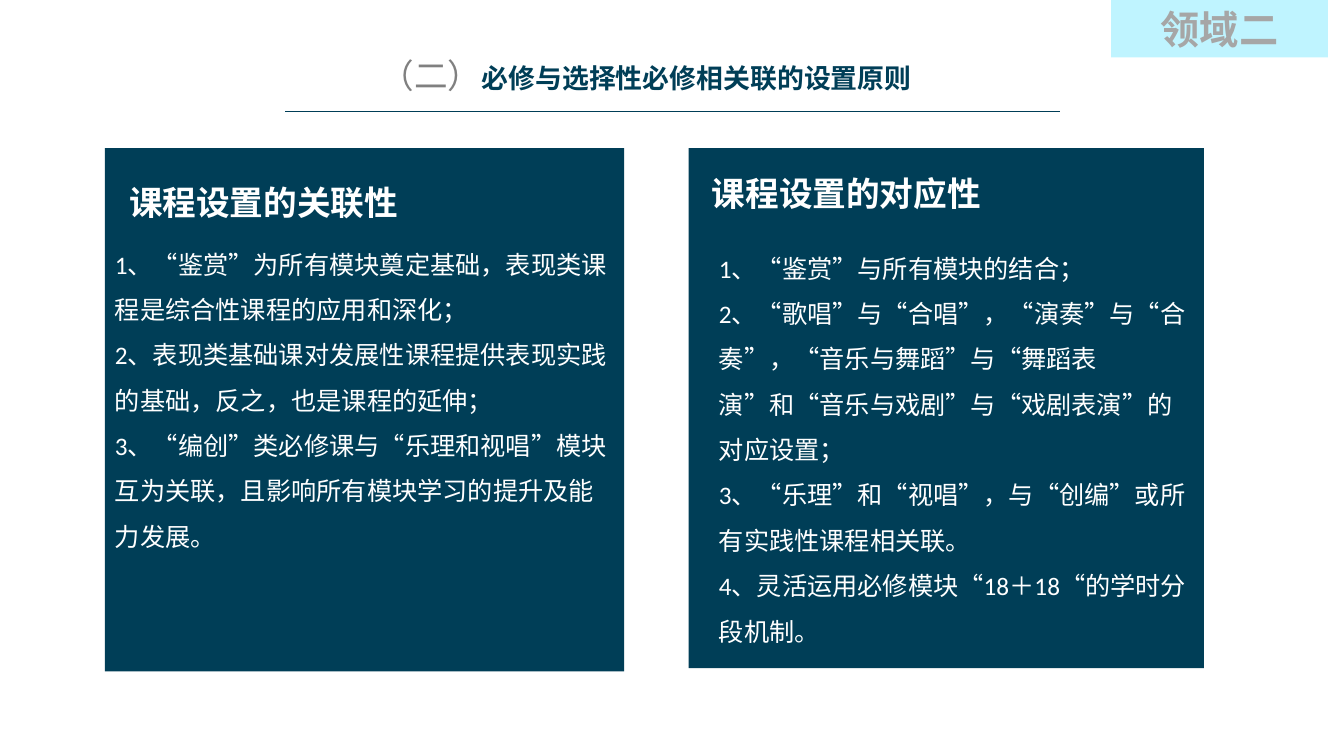
from pptx import Presentation
from pptx.dml.color import RGBColor
from pptx.enum.shapes import MSO_CONNECTOR, MSO_SHAPE
from pptx.enum.text import MSO_ANCHOR, MSO_AUTO_SIZE, PP_ALIGN
from pptx.oxml.ns import qn
from pptx.util import Inches, Pt

RECTANGLE = MSO_SHAPE.RECTANGLE
STRAIGHT = MSO_CONNECTOR.STRAIGHT
TOP, MIDDLE = MSO_ANCHOR.TOP, MSO_ANCHOR.MIDDLE
LEFT, CENTER = PP_ALIGN.LEFT, PP_ALIGN.CENTER
NAVY, PALE_CYAN, WHITE = "003E57", "BFF4FF", "FFFFFF"
GRAY, LIGHT_GRAY = "808080", "A6A6A6"
LATIN, CHINESE = "Calibri", "Noto Sans CJK SC"
COMPARISON_LAYOUT = 3 + 1

LINKED_COURSES = [
    "1、“鉴赏”为所有模块奠定基础，表现类课程是综合性课程的应用和深化；",
    "2、表现类基础课对发展性课程提供表现实践的基础，反之，也是课程的延伸；",
    "3、“编创”类必修课与“乐理和视唱”模块互为关联，且影响所有模块学习的提升及能力发展。",
]
MATCHED_COURSES = [
    "1、“鉴赏”与所有模块的结合；",
    "2、“歌唱”与“合唱”，“演奏”与“合奏”，“音乐与舞蹈”与“舞蹈表演”和“音乐与戏剧”与“戏剧表演”的对应设置；",
    "3、“乐理”和“视唱”，与“创编”或所有实践性课程相关联。",
    ["4、灵活运用必修模块“18", ("＋", {"font": CHINESE}), "18“的学时分段机制。"],
]


def color(hex_code):
    return RGBColor.from_string(hex_code)


def place(shape, left, top, width, height):
    shape.left, shape.top = Inches(left), Inches(top)
    shape.width, shape.height = Inches(width), Inches(height)


def write(shape, paragraphs, size=18, ink=WHITE, font=LATIN, bold=False,
          align=LEFT, anchor=TOP, spacing=1.0):
    """Fill a shape; a paragraph is a string or a list of spans with overrides."""
    frame = shape.text_frame
    frame.word_wrap = True
    frame.auto_size = MSO_AUTO_SIZE.NONE
    frame.vertical_anchor = anchor
    for index, spans in enumerate(paragraphs):
        para = frame.add_paragraph() if index else frame.paragraphs[0]
        para.alignment, para.line_spacing = align, spacing
        para.space_before = para.space_after = Pt(0)
        properties = para._p.get_or_add_pPr()
        properties.set("marL", "0")
        properties.set("indent", "0")
        properties.append(properties.makeelement(qn("a:buNone"), {}))
        for span in [spans] if isinstance(spans, str) else spans:
            text, own = (span, {}) if isinstance(span, str) else span
            run = para.add_run()
            run.text = text
            run.font.size = Pt(size)
            run.font.name = own.get("font", font)
            run.font.bold = own.get("bold", bold)
            run.font.color.rgb = color(own.get("ink", ink))
            if own.get("small_caps"):
                run.font._element.set("cap", "small")


def add_block(page, box, fill):
    block = page.shapes.add_shape(RECTANGLE, *map(Inches, box))
    block.shadow.inherit = False
    block.fill.solid()
    block.fill.fore_color.rgb = color(fill)
    block.line.fill.background()
    return block


def add_header(page, left, top, width):
    title = page.shapes.title
    place(title, left, top, width - 0.52, 0.47)
    name = ("必修与选择性必修相关联的设置原则",
            {"font": CHINESE, "ink": NAVY, "bold": True, "small_caps": True})
    write(title, [["（二）", name]], size=24, ink=GRAY, align=CENTER, anchor=MIDDLE)
    rule_top = Inches(top + 0.59)
    rule = page.shapes.add_connector(
        STRAIGHT, Inches(left), rule_top, Inches(left + width), rule_top)
    rule.line.color.rgb = color(NAVY)
    rule.line.width = Pt(0.25)
    properties = rule._element.spPr
    properties.append(properties.makeelement(qn("a:effectLst"), {}))


def add_panel(page, box, heading, items, first_holder, heading_at, items_at):
    """Draw a panel; heading_at and items_at are offsets from its corner."""
    left, top, width, height = box
    panel = add_block(page, box, NAVY)
    page.shapes._spTree.insert(2, panel._element)  # behind the placeholders
    holders = {holder.placeholder_format.idx: holder for holder in page.placeholders}
    parts = [(holders[first_holder], heading_at, 0.5, [heading], 24, True, 1.0),
             (holders[first_holder + 1], items_at, height - items_at[1],
              items, 18, False, 1.5)]
    for holder, (right, down), tall, texts, size, bold, spacing in parts:
        place(holder, left + right, top + down, width - right, tall)
        write(holder, texts, size=size, bold=bold, spacing=spacing)


def add_corner_tag(page, box):
    write(add_block(page, box, PALE_CYAN), ["领域二"], size=28, ink=LIGHT_GRAY,
          bold=True, align=CENTER, anchor=MIDDLE)


def main():
    deck = Presentation()
    deck.slide_width, deck.slide_height = Inches(13.33), Inches(7.5)
    page = deck.slides.add_slide(deck.slide_layouts[COMPARISON_LAYOUT])
    add_header(page, 2.83, 0.51, 7.68)
    add_panel(page, (6.83, 1.47, 5.11, 5.16), "课程设置的对应性", MATCHED_COURSES,
              3, heading_at=(0.13, 0.2), items_at=(0.2, 0.84))
    add_panel(page, (1.04, 1.47, 5.15, 5.19), "课程设置的关联性", LINKED_COURSES,
              1, heading_at=(0.14, 0.28), items_at=(0, 0.8))
    add_corner_tag(page, (11.02, 0, 2.15, 0.57))
    deck.save("out.pptx")


if __name__ == "__main__":
    main()
